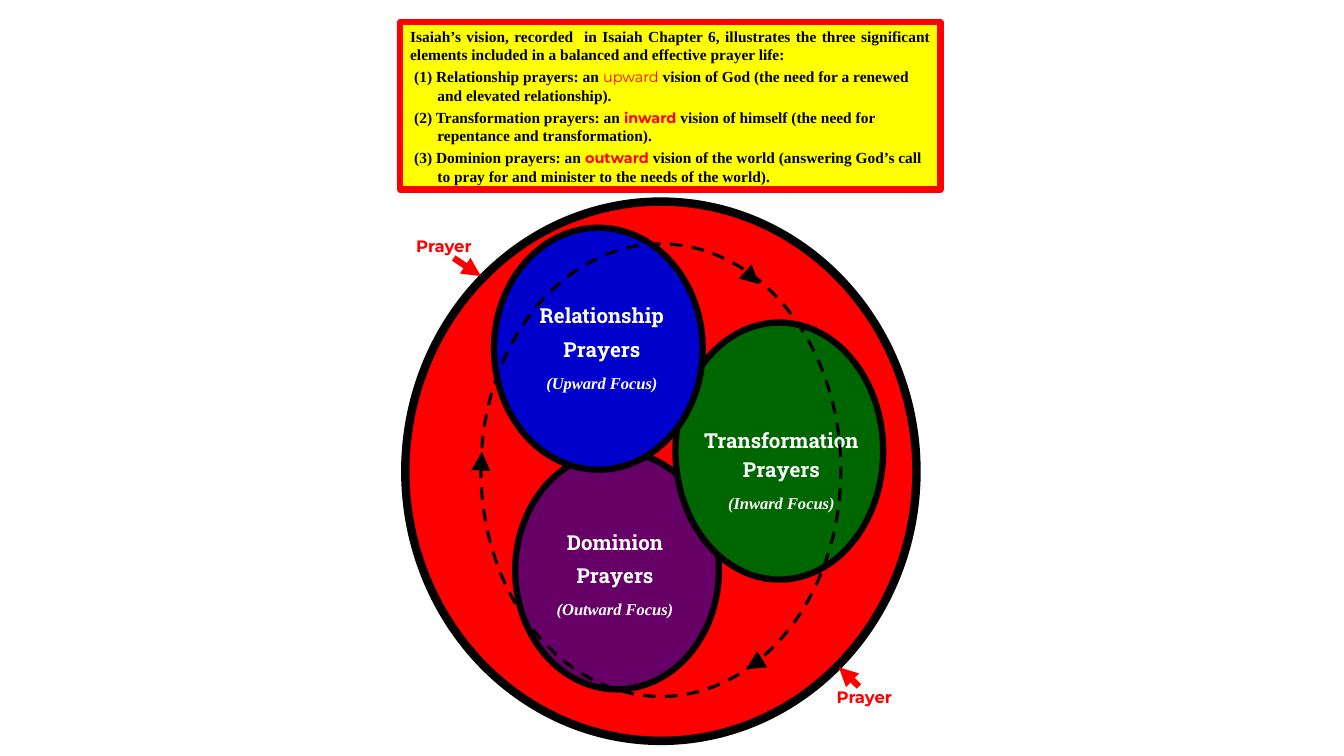
from pptx import Presentation
from pptx.dml.color import RGBColor
from pptx.enum.dml import MSO_LINE
from pptx.enum.shapes import MSO_CONNECTOR, MSO_SHAPE
from pptx.enum.text import MSO_ANCHOR, PP_ALIGN
from pptx.oxml.ns import qn
from pptx.util import Inches, Pt
from lxml import etree

OVAL, RECT = MSO_SHAPE.OVAL, MSO_SHAPE.RECTANGLE
LINE, DASH = MSO_CONNECTOR.STRAIGHT, MSO_LINE.DASH
TOP = MSO_ANCHOR.TOP
LEFT, CENTER, FULL = PP_ALIGN.LEFT, PP_ALIGN.CENTER, PP_ALIGN.JUSTIFY
SERIF, SLAB, SANS = "Times New Roman", "Roboto Slab", "Montserrat"
COLORS = {"red": "FF0000", "black": "000000", "white": "FFFFFF", "yellow": "FFFF00",
          "blue": "0000CC", "green": "006600", "purple": "660066"}

INTRO = ("Isaiah’s vision, recorded  in Isaiah Chapter 6, illustrates the three "
         "significant elements included in a balanced and effective prayer life:")
ITEMS = [
    ("(1) Relationship prayers: an ", "upward", False,
     " vision of God (the need for a renewed and elevated relationship)."),
    ("(2) Transformation prayers: an ", "inward", True,
     " vision of himself (the need for repentance and transformation)."),
    ("(3) Dominion prayers: an ", "outward", True,
     " vision of the world (answering God’s call to pray for and minister "
     "to the needs of the world)."),
]
CIRCLES = [
    ((5.11, 4.48, 2.02, 2.36), "purple", (6.1, 5.26), "Dominion", "(Outward Focus)", 5.8),
    ((6.7, 3.2, 2.06, 2.55), "green", (7.75, 4.24), "Transformation", "(Inward Focus)", 3.6),
    ((4.9, 2.26, 2.07, 2.4), "blue", (5.97, 3.01), "Relationship", "(Upward Focus)", 6.4),
]
TURNS = [(7.56, 6.54, 7.4, 6.64), (7.42, 2.72, 7.53, 2.82), (4.77, 4.66, 4.78, 4.48)]
TAGS = [((4.03, 2.29, 0.79, 0.3), (4.5, 2.56, 4.77, 2.74)),
        ((8.2, 6.77, 0.83, 0.3), (8.52, 6.81, 8.32, 6.62))]


def tint(name):
    return RGBColor.from_string(COLORS[name])


def style(font, face, size, color, bold=True, italic=False):
    font.name, font.size = face, Pt(size)
    font.bold, font.italic = bold, italic
    font.color.rgb = tint(color)


def add_form(slide, kind, box, fill, edge, width):
    form = slide.shapes.add_shape(kind, *map(Inches, box))
    form.shadow.inherit = False
    if fill:
        form.fill.solid()
        form.fill.fore_color.rgb = tint(fill)
    else:
        form.fill.background()
    form.line.color.rgb = tint(edge)
    form.line.width = Pt(width)
    return form


def add_arrow(slide, ends, color):
    arrow = slide.shapes.add_connector(LINE, *map(Inches, ends))
    arrow.line.color.rgb = tint(color)
    arrow.line.width = Pt(4.5)
    arrow.line.dash_style = DASH
    etree.SubElement(arrow.line._get_or_add_ln(), qn("a:tailEnd"), type="triangle")
    etree.SubElement(arrow._element.spPr, qn("a:effectLst"))


def add_intro(slide, box):
    frame = add_form(slide, RECT, box, "yellow", "red", 4.5).text_frame
    frame.word_wrap = True
    frame.vertical_anchor = TOP
    lead = frame.paragraphs[0]
    lead.text = INTRO
    lead.alignment = FULL
    style(lead.font, SERIF, 11, "black")
    for start, key, bold, rest in ITEMS:
        para = frame.add_paragraph()
        para.alignment = LEFT
        para.space_before = Pt(2.4)
        props = para._p.get_or_add_pPr()
        props.set("marL", str(Inches(0.27)))
        props.set("indent", str(Inches(-0.23)))
        for text in (start, key, rest):
            run = para.add_run()
            run.text = text
            if text == key:
                style(run.font, SANS, 10.3, "red", bold)
            else:
                style(run.font, SERIF, 11, "black")


def add_label(slide, spot, title, focus, gap):
    mid, top = spot
    width = 2
    box = slide.shapes.add_textbox(*map(Inches, (mid - width / 2, top, width, 0.95)))
    frame = box.text_frame
    frame.word_wrap = True
    frame.margin_left = frame.margin_right = frame.margin_top = frame.margin_bottom = 0
    rows = [(title, SLAB, 14.7, False, 0), ("Prayers", SLAB, 14.7, False, gap),
            (focus, SERIF, 11.8, True, 8)]
    for i, (text, face, size, slant, space) in enumerate(rows):
        para = frame.add_paragraph() if i else frame.paragraphs[0]
        para.text = text
        para.alignment = CENTER
        para.space_before = Pt(space)
        style(para.font, face, size, "white", True, slant)


def add_wheel(slide, box):
    left, top, width, height = box
    add_form(slide, OVAL, box, "red", "black", 6)
    for place, fill, spot, title, focus, gap in CIRCLES:
        add_form(slide, OVAL, place, fill, "black", 4.5)
        add_label(slide, spot, title, focus, gap)
    ring = (left + 0.75, top + 0.42, width - 1.5, height - 0.86)
    add_form(slide, OVAL, ring, None, "black", 2.25).line.dash_style = DASH
    for ends in TURNS:
        add_arrow(slide, ends, "black")


def add_tag(slide, box, ends):
    frame = slide.shapes.add_textbox(*map(Inches, box)).text_frame
    frame.word_wrap = False
    para = frame.paragraphs[0]
    para.text = "Prayer"
    para.alignment = LEFT
    style(para.font, SANS, 11.8, "red")
    add_arrow(slide, ends, "red")


def main():
    deck = Presentation()
    deck.slide_width, deck.slide_height = Inches(13.33), Inches(7.5)
    slide = deck.slides.add_slide(deck.slide_layouts[6])
    add_intro(slide, (3.97, 0.22, 5.36, 1.66))
    add_wheel(slide, (4.02, 2, 5.07, 5.35))
    for box, ends in TAGS:
        add_tag(slide, box, ends)
    deck.save("out.pptx")


if __name__ == "__main__":
    main()
